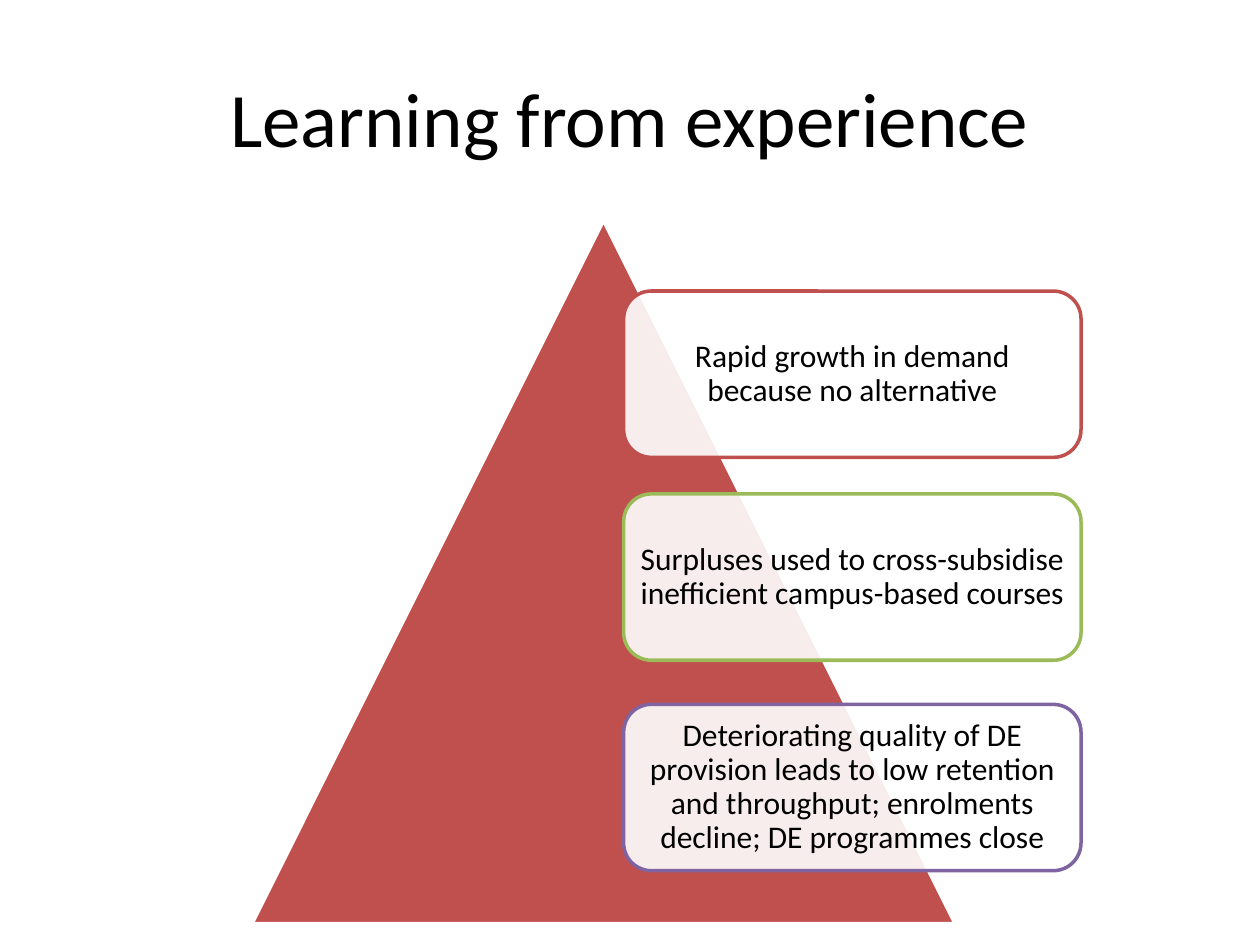
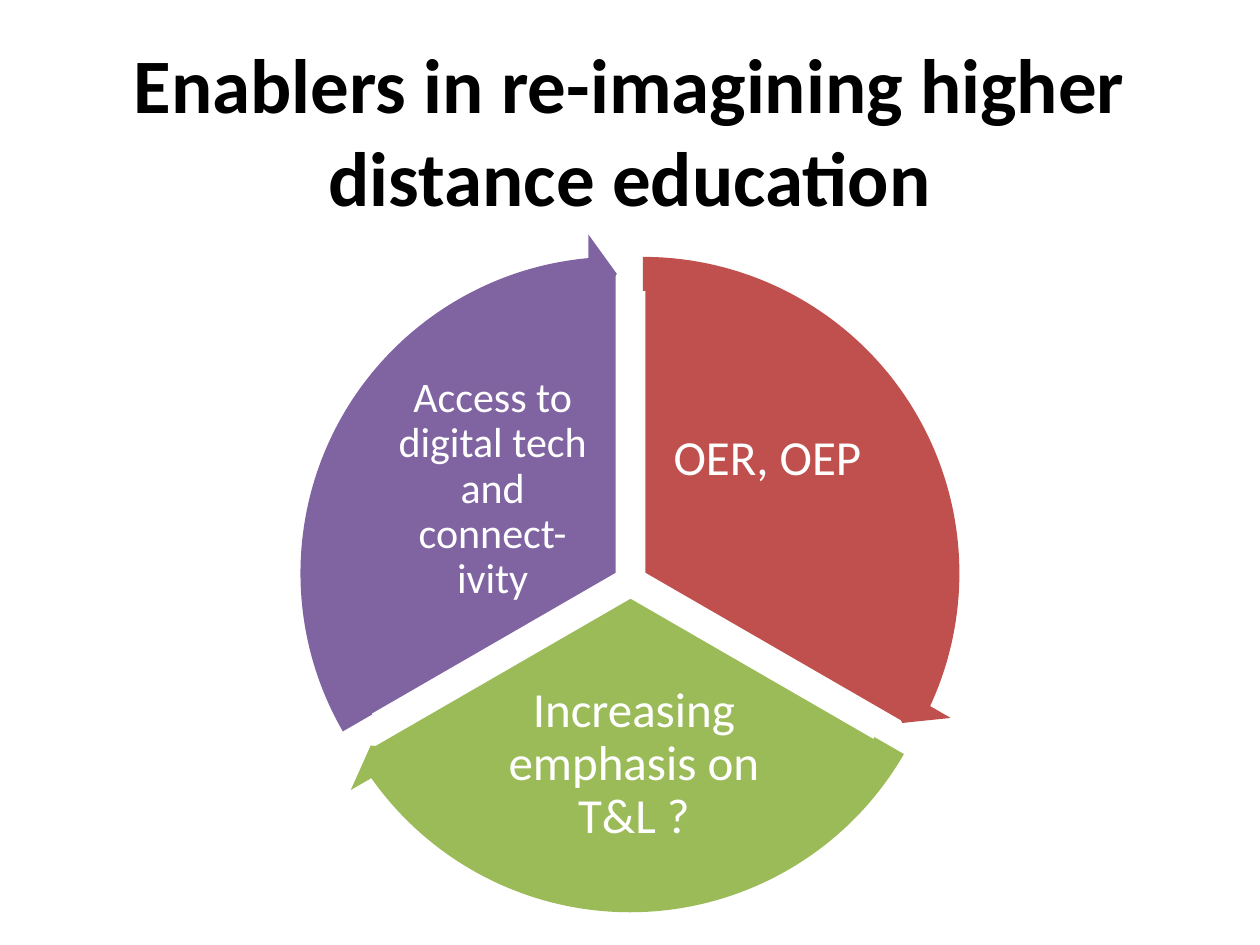
import math
import pptx
import pptx.util
import pptx.dml.color
import pptx.enum.shapes
import pptx.enum.text
import pptx.oxml.ns
from lxml import etree

Inches = pptx.util.Inches
Pt = pptx.util.Pt
RGB = pptx.dml.color.RGBColor
KIND = pptx.enum.shapes.MSO_SHAPE

BLACK = RGB(0x00, 0x00, 0x00)
WHITE = RGB(0xFF, 0xFF, 0xFF)
RED = RGB(0xC0, 0x50, 0x4D)
GREEN = RGB(0x9B, 0xBB, 0x59)
PURPLE = RGB(0x80, 0x64, 0xA2)

FONT = {"name": "Calibri", "size": Pt(18), "bold": False}
HEAD = {"size": Pt(44)}
TURN = 216

CARDS = [
    (0.56, RED, "Rapid growth in demand because no alternative"),
    (2.17, GREEN, "Surpluses used to cross-subsidise inefficient campus-based courses"),
    (3.84, PURPLE, "Deteriorating quality of DE provision leads to low retention "
                   "and throughput; enrolments decline; DE programmes close"),
]
PARTS = [
    (RED, "OER, OEP", 28, (2.93, 1.02, 1.72, 1.43)),
    (GREEN, "Increasing emphasis on T&L ?", 28, (1.44, 3.53, 2.58, 1.26)),
    (PURPLE, "Access to digital tech and connect-ivity", 24, (0.75, 1.26, 1.72, 1.43)),
]


def place(box):
    """Turn a box in inches into lengths."""
    return [Inches(side) for side in box]


def write(shape, text, color, look, inset=None, space=1.0):
    """Put centred text in a shape."""
    frame = shape.text_frame
    frame.word_wrap = True
    frame.vertical_anchor = pptx.enum.text.MSO_ANCHOR.MIDDLE
    if inset is not None:
        for side in ("left", "top", "right", "bottom"):
            setattr(frame, f"margin_{side}", Inches(inset))
    para = frame.paragraphs[0]
    para.text = text
    para.alignment = pptx.enum.text.PP_ALIGN.CENTER
    para.line_spacing = space
    for key, value in {**FONT, **look}.items():
        setattr(para.font, key, value)
    para.font.color.rgb = color


def draw(slide, kind, box, fill, line=None, adjust=()):
    """Add a flat preset shape."""
    shape = slide.shapes.add_shape(kind, *place(box))
    shape.shadow.inherit = False
    shape.fill.solid()
    shape.fill.fore_color.rgb = fill
    if line is None:
        shape.line.fill.background()
    else:
        shape.line.color.rgb = line
        shape.line.width = Pt(2)
    for index, value in enumerate(adjust):
        shape.adjustments[index] = value
    return shape


def fade(shape, share):
    """Set the opacity of a solid fill in percent."""
    tag = pptx.oxml.ns.qn
    tint = shape.fill._xPr.find(tag("a:solidFill"))[0]
    etree.SubElement(tint, tag("a:alpha")).set("val", str(share * 1000))


def title(slide, text, top, look):
    """Add the slide title."""
    box = slide.shapes.add_textbox(*place((0.5, top, 9, 1.25)))
    write(box, text, BLACK, {**HEAD, **look})


def pyramid(slide, box):
    """Draw a triangle with a column of cards over its right side."""
    left, top = box[:2]
    draw(slide, KIND.ISOSCELES_TRIANGLE, box, RED, WHITE)
    for drop, color, text in CARDS:
        card = draw(slide, KIND.ROUNDED_RECTANGLE,
                    (left + 2.95, top + drop, 3.63, 1.32), WHITE, color)
        fade(card, 90)
        write(card, text, BLACK, {}, 0.07, 0.9)


def cycle(slide, box):
    """Draw three wedges with labels, ringed by arrows."""
    left, top, wide, high = box
    arrows = []
    for index, (color, text, size, spot) in enumerate(PARTS):
        start, stop = (162 + 72 * index) % TURN, (18 + 72 * index) % TURN
        angle = math.radians(120 * index - 30)
        x = left + 0.12 * math.cos(angle)
        y = top + 0.12 * math.sin(angle)
        draw(slide, KIND.PIE, (x + 0.3, y + 0.3, wide - 0.59, high - 0.59),
             color, WHITE, (start, stop))
        label = slide.shapes.add_textbox(
            *place((left + spot[0], top + spot[1], *spot[2:])))
        write(label, text, WHITE, {"size": Pt(size)}, 0.04, 0.9)
        arrows.append(((x, y, wide, high), color,
                       (0.05, 3.28, stop - 3.28, start, 0.06)))
    for area, color, adjust in arrows:
        draw(slide, KIND.CIRCULAR_ARROW, area, color, adjust=adjust)


def main():
    """Build and save the slides."""
    deck = pptx.Presentation()
    deck.slide_width, deck.slide_height = Inches(10), Inches(7.5)
    blank = deck.slide_layouts[6]

    slide = deck.slides.add_slide(blank)
    title(slide, "Learning from experience", 0.3, {})
    pyramid(slide, (2, 1.75, 5.58, 5.58))

    slide = deck.slides.add_slide(blank)
    title(slide, "Enablers in re-imagining higher distance education", 0.4,
          {"bold": True})
    cycle(slide, (2.3, 1.91, 5.4, 5.4))

    deck.save("out.pptx")


if __name__ == "__main__":
    main()
